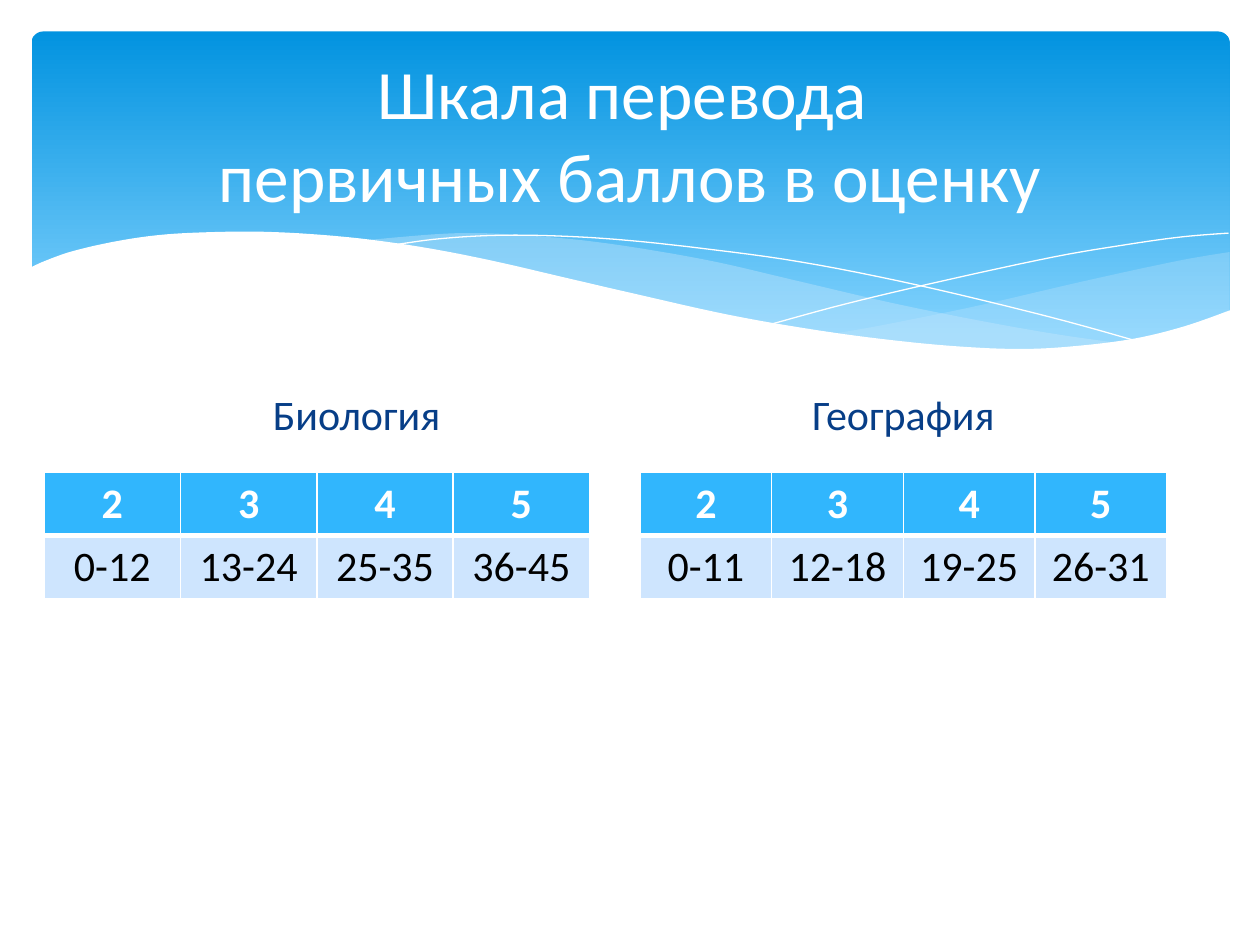
from dataclasses import dataclass

from lxml import etree
from pptx import Presentation
from pptx.dml.color import RGBColor
from pptx.enum.shapes import MSO_SHAPE
from pptx.enum.text import MSO_ANCHOR, PP_ALIGN
from pptx.oxml.ns import qn
from pptx.util import Inches, Pt

ROUND = MSO_SHAPE.ROUNDED_RECTANGLE
MIDDLE = MSO_ANCHOR.MIDDLE
CENTER = PP_ALIGN.CENTER

HUES = {
    "white": "FFFFFF", "black": "000000", "navy": "073E87", "deep": "0293E0",
    "light": "83D3FE", "mist": "C6E7FC", "head": "31B6FD", "body": "CEE5FE",
}
TITLE = {"size": Pt(39.6), "name": "Calibri"}
LABEL = {"size": Pt(24), "name": "Calibri"}
HEAD = {**LABEL, "bold": True}
BODY = {**LABEL, "bold": False}
STEPS = 6

Point = tuple[float, float]
Curve = list[Point]


@dataclass
class Wave:
    curves: list[Curve]
    fill: str | None = None
    alpha: int = 100


@dataclass
class Scale:
    name: str
    text_left: float
    left: float
    width: float
    marks: list[str]


WAVES = [
    Wave([[(9.76, 2), (9.35, 2.07), (8.61, 2.23), (7.79, 2.42), (7.06, 2.57), (6.61, 2.65)],
          [(6.61, 2.65), (7.05, 2.71), (7.45, 2.75), (8.03, 2.78), (8.54, 2.76),
           (8.97, 2.7), (9.35, 2.62), (9.76, 2.47)]], "mist", 29),
    Wave([[(8.93, 2.73), (8.37, 2.65), (7.75, 2.54), (7.06, 2.4), (6.29, 2.22),
           (5.69, 2.08), (5.14, 1.98), (4.65, 1.91), (4.2, 1.87), (3.8, 1.85),
           (3.44, 1.86), (2.86, 1.91)],
          [(2.86, 1.91), (3.42, 1.99), (4.04, 2.11), (4.91, 2.32), (5.66, 2.48),
           (6.34, 2.61), (6.95, 2.7), (7.48, 2.76), (7.96, 2.78), (8.38, 2.78),
           (8.93, 2.73)]], "mist", 40),
    Wave([[(3.09, 1.95), (3.44, 1.9), (3.87, 1.87), (4.33, 1.87), (4.89, 1.9),
           (5.56, 1.97), (6.36, 2.08), (7.27, 2.26), (8.31, 2.51), (9.07, 2.72)]]),
    Wave([[(6.13, 2.57), (6.72, 2.41), (7.48, 2.23), (8.36, 2.04), (8.95, 1.94),
           (9.38, 1.88), (9.75, 1.85)]]),
    Wave([[(9.77, 2.46), (9.4, 2.59), (8.99, 2.69), (8.5, 2.75), (8.09, 2.77),
           (7.61, 2.75), (7.08, 2.7), (6.48, 2.62), (5.79, 2.5), (5.03, 2.33),
           (4.47, 2.2), (3.91, 2.07), (3.4, 1.97), (2.92, 1.9), (2.5, 1.86),
           (2.11, 1.84), (1.77, 1.84), (1.32, 1.86), (0.95, 1.91), (0.59, 1.99),
           (0.36, 2.07), (0.23, 2.13)],
          [(0.23, 3.29), (9.77, 3.29)]], "white"),
]
GRADES = ["2", "3", "4", "5"]
SCALES = [
    Scale("Биология", 0.74, 0.35, 4.33, ["0-12", "13-24", "25-35", "36-45"]),
    Scale("География", 5.08, 5.08, 4.18, ["0-11", "12-18", "19-25", "26-31"]),
]


def tint(key: str) -> RGBColor:
    return RGBColor.from_string(HUES[key])


def smooth(curve: Curve) -> Curve:
    ends = [curve[0], *curve, curve[-1]]
    dots = [curve[0]]
    for a, b, c, d in zip(ends, ends[1:], ends[2:], ends[3:]):
        for step in range(1, STEPS + 1):
            t = step / STEPS
            dots.append(tuple(
                (2 * q + (r - p) * t + (2 * p - 5 * q + 4 * r - s) * t**2
                 + (3 * q - p - 3 * r + s) * t**3) / 2
                for p, q, r, s in zip(a, b, c, d)))
    return dots


def draw_wave(slide, wave: Wave) -> None:
    dots = [(Inches(x), Inches(y)) for curve in wave.curves for x, y in smooth(curve)]
    pen = slide.shapes.build_freeform(*dots[0])
    pen.add_line_segments(dots[1:], close=wave.fill is not None)
    shape = pen.convert_to_shape()
    shape.shadow.inherit = False
    if wave.fill is None:
        shape.fill.background()
        shape.line.color.rgb = tint("white")
        shape.line.width = Pt(0)
        return
    shape.line.fill.background()
    shape.fill.solid()
    shape.fill.fore_color.rgb = tint(wave.fill)
    if wave.alpha < 100:
        color = shape.fill._xPr.find(qn("a:solidFill")).find(qn("a:srgbClr"))
        etree.SubElement(color, qn("a:alpha"), val=str(wave.alpha * 1000))


def draw_band(slide) -> None:
    band = slide.shapes.add_shape(ROUND, Inches(0.25), Inches(0.25), Inches(9.51), Inches(2.7))
    band.adjustments[0] = 0.034
    band.shadow.inherit = False
    band.line.fill.background()
    band.fill.gradient()
    band.fill.gradient_angle = 270
    for stop, (place, key) in zip(band.fill.gradient_stops, [(0, "deep"), (0.9, "light")]):
        stop.position = place
        stop.color.rgb = tint(key)


def write(frame, text: str, form: dict, key: str) -> None:
    para = frame.paragraphs[0]
    para.text = text
    para.alignment = CENTER
    for run in para.runs:
        for name, value in form.items():
            setattr(run.font, name, value)
        run.font.color.rgb = tint(key)


def add_text(slide, spot: tuple, text: str, form: dict, key: str, gap: float = 0) -> None:
    frame = slide.shapes.add_textbox(*map(Inches, spot)).text_frame
    frame.word_wrap = True
    frame.vertical_anchor = MIDDLE
    write(frame, text, form, key)
    frame.paragraphs[0].space_before = Pt(gap)


def edge(cell, sides: dict[str, int]) -> None:
    props = cell._tc.get_or_add_tcPr()
    for side, width in sides.items():
        line = etree.SubElement(props, qn(f"a:ln{side}"), w=str(Pt(width)))
        fill = etree.SubElement(line, qn("a:solidFill"))
        etree.SubElement(fill, qn("a:srgbClr"), val=HUES["white"])


def draw_scale(slide, scale: Scale) -> None:
    add_text(slide, (scale.text_left, 2.93, 4.18, 0.7), scale.name, LABEL, "navy", 4.8)
    rows = [
        (GRADES, HEAD, "white", "head", {"L": 1, "R": 1, "T": 1, "B": 3}),
        (scale.marks, BODY, "black", "body", {"L": 1, "R": 1, "T": 3, "B": 1}),
    ]
    table = slide.shapes.add_table(
        len(rows), len(GRADES), Inches(scale.left), Inches(3.75),
        Inches(scale.width), Inches(1)).table
    table.horz_banding = False
    for r, (texts, form, ink, fill, sides) in enumerate(rows):
        for c, text in enumerate(texts):
            cell = table.cell(r, c)
            edge(cell, sides)
            cell.fill.solid()
            cell.fill.fore_color.rgb = tint(fill)
            write(cell.text_frame, text, form, ink)


def main() -> None:
    deck = Presentation()
    deck.slide_width, deck.slide_height = Inches(10), Inches(7.5)
    slide = deck.slides.add_slide(deck.slide_layouts[6])
    draw_band(slide)
    for wave in WAVES:
        draw_wave(slide, wave)
    add_text(slide, (0.5, 0.37, 9, 1.37), "Шкала перевода \nпервичных баллов в оценку",
             TITLE, "white")
    for scale in SCALES:
        draw_scale(slide, scale)
    deck.save("out.pptx")


if __name__ == "__main__":
    main()
